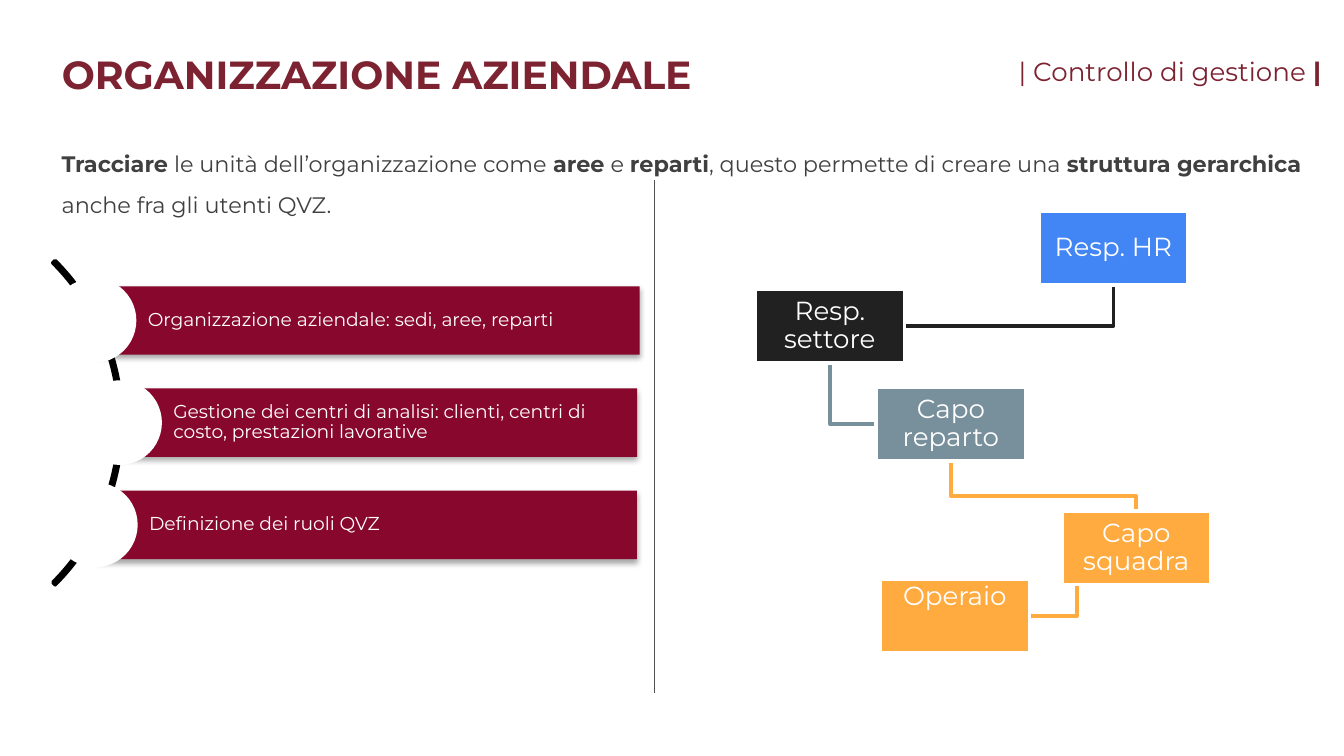
"""Build the slide on company organisation, with topic bars and a hierarchy of roles."""
from dataclasses import dataclass
from typing import Any

import lxml.etree
import pptx
import pptx.dml.color
import pptx.enum.shapes
import pptx.enum.text
import pptx.oxml.ns
import pptx.util

RGBColor = pptx.dml.color.RGBColor
WHITE = RGBColor(0xFF, 0xFF, 0xFF)
BLACK = RGBColor(0x00, 0x00, 0x00)
WINE = RGBColor(0x7C, 0x22, 0x31)
CRIMSON = RGBColor(0x88, 0x07, 0x2C)
GREY = RGBColor(0x50, 0x50, 0x50)
DARK_GREY = RGBColor(0x40, 0x40, 0x40)
BLUE = RGBColor(0x42, 0x85, 0xF4)
CHARCOAL = RGBColor(0x21, 0x21, 0x21)
SLATE = RGBColor(0x78, 0x90, 0x9C)
ORANGE = RGBColor(0xFF, 0xAB, 0x40)

SLIDE_WIDTH = pptx.util.Inches(10)
SLIDE_HEIGHT = SLIDE_WIDTH * 9 // 16
COLUMNS, ROWS = 100, 56.25
FONT = "Montserrat"
SHAPE = pptx.enum.shapes.MSO_SHAPE
ANCHOR = pptx.enum.text.MSO_ANCHOR
ALIGN = pptx.enum.text.PP_ALIGN
Point = tuple[float, float]


@dataclass(frozen=True)
class Area:
    """A rectangle in grid columns and rows."""
    left: float
    top: float
    width: float
    height: float

    def point(self, across: float, down: float) -> Point:
        """Return the point at the given shares of the width and height."""
        return self.left + across * self.width, self.top + down * self.height

    def lengths(self) -> tuple[int, int, int, int]:
        """Return left, top, width and height as slide lengths."""
        return (*place((self.left, self.top)), *place((self.width, self.height)))


@dataclass(frozen=True)
class Topic:
    """A bar with a round notch."""
    text: str
    left: float
    width: float


@dataclass(frozen=True)
class Role:
    """A box of the hierarchy."""
    text: str
    left: float
    top: float
    color: RGBColor
    anchor: Any = ANCHOR.MIDDLE
    inset: float = 0.01

    @property
    def area(self) -> Area:
        """Return the area of the box."""
        return Area(self.left, self.top, 11.1, 5.5)


TOPICS = [
    Topic("Organizzazione aziendale: sedi, aree, reparti", 7, 40.6),
    Topic("Gestione dei centri di analisi: clienti, centri di costo, prestazioni lavorative", 8.9, 38.5),
    Topic("Definizione dei ruoli QVZ", 7.1, 40.3),
]
TOPIC_TOP, TOPIC_STEP, TOPIC_HEIGHT, NOTCH = 21.3, 7.6, 5.1, 6.3

HEAD = Role("Resp. HR", 77.3, 15.7, BLUE)
SECTOR = Role("Resp. settore", 56.2, 21.5, CHARCOAL)
DEPARTMENT = Role("Capo reparto", 65.2, 28.8, SLATE)
TEAM = Role("Capo squadra", 79, 38, ORANGE)
WORKER = Role("Operaio", 65.5, 43.1, ORANGE, ANCHOR.TOP, 0.03)


def place(point: Point) -> tuple[int, int]:
    """Turn grid columns and rows into slide lengths."""
    return round(SLIDE_WIDTH * point[0] / COLUMNS), round(SLIDE_HEIGHT * point[1] / ROWS)


def set_values(target: Any, values: dict[str, Any]) -> None:
    """Set attributes from a dict of format values."""
    for name, value in values.items():
        setattr(target, name, value)


def write(shape: Any, spans: list[tuple[str, bool]], size: float, color: RGBColor,
          frame: dict[str, Any], paragraph: dict[str, Any]) -> None:
    """Write one paragraph of plain and bold spans."""
    set_values(shape.text_frame, {"word_wrap": True, **frame})
    para = shape.text_frame.paragraphs[0]
    set_values(para, paragraph)
    for text, bold in spans:
        span = para.add_run()
        span.text = text
        set_values(span.font, {"name": FONT, "size": pptx.util.Pt(size), "bold": bold})
        span.font.color.rgb = color


def insets(left: float, other: float) -> dict[str, int]:
    """Return margins in inches, with a separate left one."""
    margins = {f"margin_{side}": pptx.util.Inches(other) for side in ("right", "top", "bottom")}
    return {"margin_left": pptx.util.Inches(left), **margins}


def set_line(shape: Any, color: RGBColor, width: float) -> None:
    """Give a shape a solid line."""
    shape.line.color.rgb = color
    shape.line.width = pptx.util.Pt(width)


def add_shape(page: Any, kind: Any, area: Area, fill: RGBColor | None) -> Any:
    """Add a flat preset shape without a line."""
    shape = page.shapes.add_shape(kind, *area.lengths())
    if fill is None:
        shape.fill.background()
    else:
        shape.fill.solid()
        shape.fill.fore_color.rgb = fill
    shape.line.fill.background()
    shape.shadow.inherit = False
    return shape


def add_shadow(shape: Any) -> None:
    """Add a soft shadow below a flat shape."""
    qn = pptx.oxml.ns.qn
    effects = shape._element.spPr.find(qn("a:effectLst"))
    shadow = lxml.etree.SubElement(effects, qn("a:outerShdw"), blurRad=str(pptx.util.Pt(3.1)),
                                   dist=str(pptx.util.Pt(1.8)), dir="5400000", rotWithShape="0")
    color = lxml.etree.SubElement(shadow, qn("a:srgbClr"), val=str(BLACK))
    lxml.etree.SubElement(color, qn("a:alpha"), val="35000")


def add_topic(page: Any, topic: Topic, index: int) -> None:
    """Add a topic bar and the white circle that notches it."""
    area = Area(topic.left, TOPIC_TOP + index * TOPIC_STEP, topic.width, TOPIC_HEIGHT)
    bar = add_shape(page, SHAPE.RECTANGLE, area, CRIMSON)
    add_shadow(bar)
    write(bar, [(topic.text, False)], 10, WHITE,
          {"vertical_anchor": ANCHOR.MIDDLE, **insets(0.4, 0.03)},
          {"alignment": ALIGN.LEFT, "line_spacing": 0.9})
    middle = area.point(0, 0.5)
    add_shape(page, SHAPE.OVAL, Area(middle[0] - NOTCH / 2, middle[1] - NOTCH / 2, NOTCH, NOTCH), WHITE)


def add_role(page: Any, role: Role) -> None:
    """Add a box of the hierarchy."""
    box = add_shape(page, SHAPE.RECTANGLE, role.area, role.color)
    set_line(box, WHITE, 2)
    write(box, [(role.text, False)], 14, WHITE,
          {"vertical_anchor": role.anchor, **insets(role.inset, role.inset)},
          {"alignment": ALIGN.CENTER, "line_spacing": 0.9})


def add_link(page: Any, color: RGBColor, points: list[Point]) -> None:
    """Add an open angled line between two roles."""
    start, *others = map(place, points)
    builder = page.shapes.build_freeform(*start)
    builder.add_line_segments(others, close=False)
    link = builder.convert_to_shape()
    link.fill.background()
    set_line(link, color, 2)
    link.shadow.inherit = False


def add_corner(page: Any, upper: Role, lower: Role, start: float, side: float, color: RGBColor) -> None:
    """Link the bottom of one role to a side of another with one bend."""
    begin, end = upper.area.point(start, 1), lower.area.point(side, 0.5)
    add_link(page, color, [begin, (begin[0], end[1]), end])


def main() -> None:
    """Build and save the deck."""
    deck = pptx.Presentation()
    set_values(deck, {"slide_width": SLIDE_WIDTH, "slide_height": SLIDE_HEIGHT})
    page = deck.slides.add_slide(deck.slide_layouts[5])

    title = page.shapes.title
    set_values(title, dict(zip(("left", "top", "width", "height"), Area(3.6, 3.9, 66.4, 2.8).lengths())))
    write(title, [("ORGANIZZAZIONE AZIENDALE", True)], 21, WINE,
          {"vertical_anchor": ANCHOR.TOP, "auto_size": pptx.enum.text.MSO_AUTO_SIZE.NONE},
          {"alignment": ALIGN.LEFT, "line_spacing": 0.8})

    divider = page.shapes.add_connector(pptx.enum.shapes.MSO_CONNECTOR.STRAIGHT,
                                        *place((48.7, 13.4)), *place((48.7, 51.6)))
    set_line(divider, GREY, 0.75)
    lxml.etree.SubElement(divider._element.spPr, pptx.oxml.ns.qn("a:effectLst"))

    arc = add_shape(page, SHAPE.BLOCK_ARC, Area(-25, 14.4, 34.1, 34.1), None)
    for index, value in enumerate((189, 27, 0.7 / 100)):
        arc.adjustments[index] = value
    set_line(arc, BLACK, 2)
    for index, topic in enumerate(TOPICS):
        add_topic(page, topic, index)

    intro = page.shapes.add_textbox(*Area(3.6, 9.7, 94.5, 6.7).lengths())
    write(intro, [("Tracciare", True), (" le unità dell’organizzazione come ", False), ("aree", True),
                  (" e ", False), ("reparti", True), (", questo permette di creare una ", False),
                  ("struttura gerarchica ", True), ("anche fra gli utenti QVZ.", False)],
          12, DARK_GREY, {}, {"line_spacing": 1.5})

    add_corner(page, TEAM, WORKER, 0.1, 1, ORANGE)
    begin, end = DEPARTMENT.area.point(0.5, 1), TEAM.area.point(0.5, 0)
    add_link(page, ORANGE, [begin, (begin[0], 36.9), (end[0], 36.9), end])
    add_corner(page, SECTOR, DEPARTMENT, 0.5, 0, SLATE)
    add_corner(page, HEAD, SECTOR, 0.5, 1, CHARCOAL)
    for role in (HEAD, SECTOR, DEPARTMENT, TEAM, WORKER):
        add_role(page, role)

    section = page.shapes.add_textbox(*Area(74.8, 3.6, 25.2, 3.4).lengths())
    write(section, [("| Controllo di gestione ", False), ("|", True)], 14, WINE, {}, {})
    deck.save("out.pptx")


if __name__ == "__main__":
    main()
